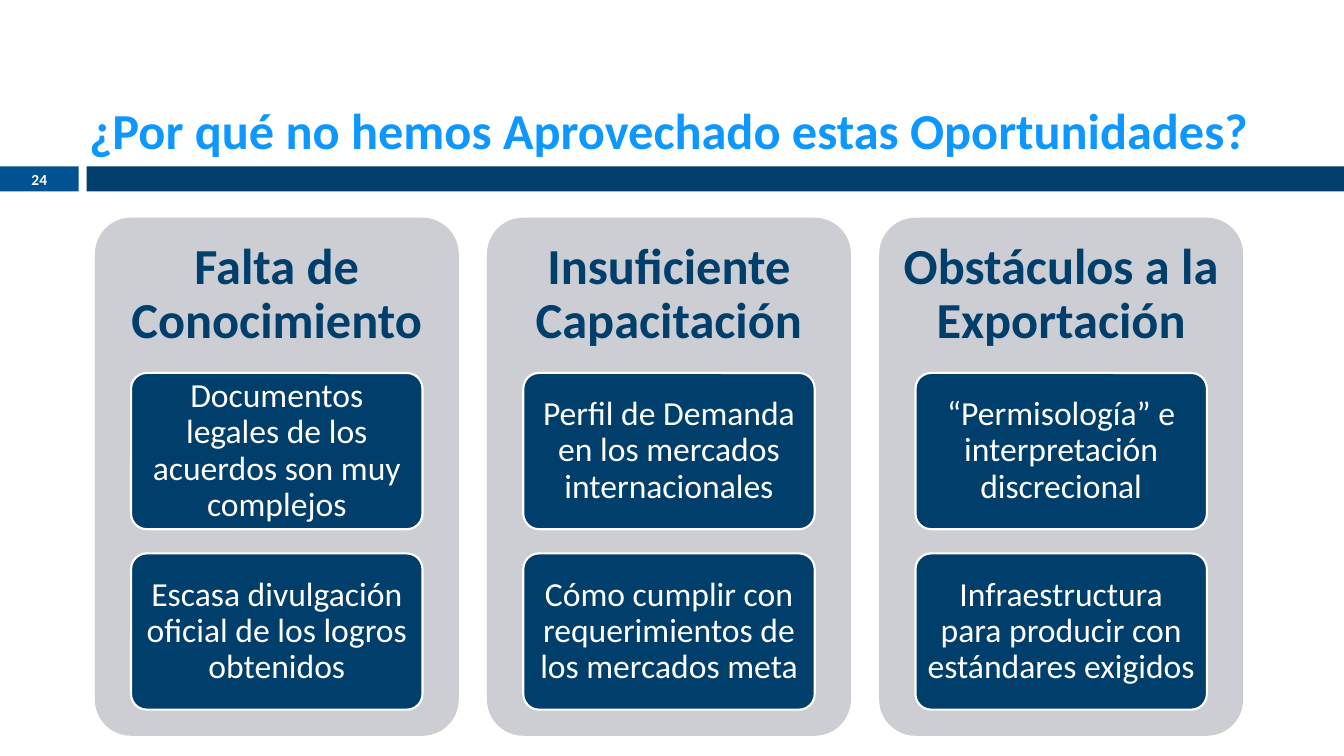
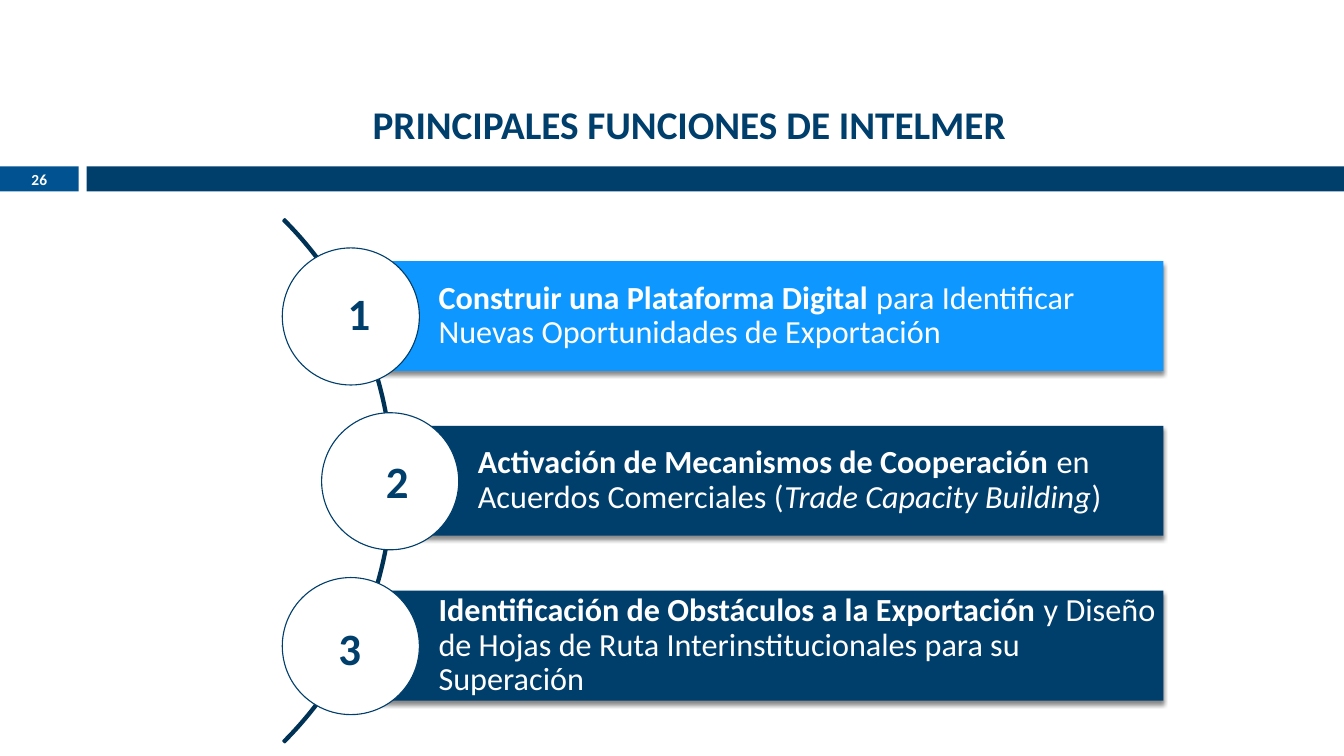
from lxml import etree
from pptx import Presentation
from pptx.dml.color import RGBColor
from pptx.enum import shapes as kinds, text as txt
from pptx.oxml.ns import qn
from pptx.util import Inches, Pt

COLORS = {"navy": "003E6C", "blue": "005390", "sky": "0E98FF",
          "gray": "CCCED4", "arc": "003256", "white": "FFFFFF",
          "shadow": "000000"}
FONT = "Calibri"
CENTER, LEFT = txt.PP_ALIGN.CENTER, txt.PP_ALIGN.LEFT
TOP, MIDDLE, BOTTOM = (txt.MSO_ANCHOR.TOP, txt.MSO_ANCHOR.MIDDLE,
                       txt.MSO_ANCHOR.BOTTOM)
SHAPE = kinds.MSO_SHAPE
DEFAULT_INSETS = (0.1, 0.05, 0.1, 0.05)

OBSTACLES = [
    ("Falta de Conocimiento",
     ["Documentos legales de los acuerdos son muy complejos",
      "Escasa divulgación oficial de los logros obtenidos"]),
    ("Insuficiente Capacitación",
     ["Perfil de Demanda en los mercados internacionales",
      "Cómo cumplir con requerimientos de los mercados meta"]),
    ("Obstáculos a la Exportación",
     ["“Permisología” e interpretación discrecional",
      "Infraestructura para producir con estándares exigidos"]),
]

# Bar left edge, bar colour, number position, text runs
FUNCTIONS = [
    (3.48, "sky", (3.32, 2.79),
     [("Construir una Plataforma Digital", {"bold": True}),
      (" para Identificar Nuevas Oportunidades de Exportación", {})]),
    (3.87, "navy", (3.7, 4.45),
     [("Activación de Mecanismos de Cooperación", {"bold": True}),
      (" en Acuerdos Comerciales (", {}),
      ("Trade Capacity Building", {"italic": True}),
      (")", {})]),
    (3.48, "navy", (3.23, 6.11),
     [("Identificación de Obstáculos a la Exportación", {"bold": True}),
      (" y Diseño de Hojas de Ruta Interinstitucionales para su Superación",
       {})]),
]


def rgb(name):
    return RGBColor.from_string(COLORS[name])


def write(shape, runs, size, color, bold=False, align=CENTER, anchor=MIDDLE,
          insets=DEFAULT_INSETS, spacing=1.0):
    """Fill a shape with one paragraph; runs is a string or (text, style) pairs."""
    frame = shape.text_frame
    left, top, right, bottom = map(Inches, insets)
    frame_format = {"word_wrap": True, "auto_size": txt.MSO_AUTO_SIZE.NONE,
                    "vertical_anchor": anchor, "margin_left": left,
                    "margin_top": top, "margin_right": right,
                    "margin_bottom": bottom}
    for name, value in frame_format.items():
        setattr(frame, name, value)
    paragraph = frame.paragraphs[0]
    paragraph.alignment, paragraph.line_spacing = align, spacing
    for words, style in [(runs, {})] if isinstance(runs, str) else runs:
        run = paragraph.add_run()
        run.text = words
        font_format = {"name": FONT, "size": Pt(size), "bold": bold, **style}
        for name, value in font_format.items():
            setattr(run.font, name, value)
        run.font.color.rgb = rgb(color)


def add_block(slide, kind, at, fill, line=None, width=1.5, adjust=()):
    block = slide.shapes.add_shape(kind, *map(Inches, at))
    block.shadow.inherit = False
    block.fill.solid()
    block.fill.fore_color.rgb = rgb(fill)
    if line:
        block.line.color.rgb = rgb(line)
        block.line.width = Pt(width)
    else:
        block.line.fill.background()
    for index, value in enumerate(adjust):
        block.adjustments[index] = value
    return block


def add_label(slide, at, words, size, color, **style):
    label = slide.shapes.add_textbox(*map(Inches, at))
    write(label, words, size, color, **style)


def cast_shadow(block):
    effects = block.element.spPr.find(qn("a:effectLst"))
    shadow = etree.SubElement(effects, qn("a:outerShdw"), {
        "blurRad": str(Pt(3)), "dist": str(Pt(2.4)), "dir": "5400000",
        "rotWithShape": "0"})
    tint = etree.SubElement(shadow, qn("a:srgbClr"), val=COLORS["shadow"])
    etree.SubElement(tint, qn("a:alpha"), val="45000")


def add_bands(slide, layout):
    """Draw the header bands and hand them to the layout all slides share."""
    for left, width, color in [(0, 0.78, "blue"), (0.86, 12.47, "navy")]:
        band = add_block(slide, SHAPE.RECTANGLE, (left, 1.65, width, 0.25), color)
        layout.shapes.element.append(band.element)


def add_header(slide, title, at, size, color, anchor, number):
    heading = slide.shapes.title
    heading.left, heading.top, heading.width, heading.height = map(Inches, at)
    write(heading, title, size, color, bold=True, anchor=anchor)
    add_label(slide, (0, 1.64, 0.78, 0.27), number, 11, "white", bold=True)


def add_obstacles(slide):
    for column, (heading, causes) in enumerate(OBSTACLES):
        left = 0.94 + column * 3.89
        add_block(slide, SHAPE.ROUNDED_RECTANGLE, (left, 2.16, 3.61, 5.14),
                  "gray", adjust=[0.1])
        add_label(slide, (left, 2.16, 3.61, 1.54), heading, 36, "navy",
                  bold=True, insets=(0.15,) * 4, spacing=0.9)
        for row, cause in enumerate(causes):
            card = add_block(slide, SHAPE.ROUNDED_RECTANGLE,
                             (left + 0.36, 3.7 + row * 1.79, 2.89, 1.55),
                             "navy", "white", adjust=[0.1])
            write(card, cause, 24, "white", insets=(0.07, 0.05, 0.07, 0.05),
                  spacing=0.9)


def add_functions(slide):
    # Arc from 315 to 45 degrees behind the numbered bars
    add_block(slide, SHAPE.BLOCK_ARC, (-3.44, 1.1, 7.34, 7.34), "arc", "arc",
              adjust=[189, 27, 0.003])
    bar_right, circle_size = 11.54, 1.36
    for index, (left, color, number_at, runs) in enumerate(FUNCTIONS):
        top = 2.59 + index * 1.635
        bar = add_block(slide, SHAPE.RECTANGLE,
                        (left, top, bar_right - left, 1.09), color)
        cast_shadow(bar)
        write(bar, runs, 23, "white", align=LEFT,
              insets=(0.87, 0.06, 0.06, 0.06), spacing=0.9)
        add_block(slide, SHAPE.OVAL,
                  (left - circle_size / 2, top - 0.13, circle_size, circle_size),
                  "white", "navy", 0.79)
        add_label(slide, (*number_at, 0.48, 0.64), str(index + 1), 32, "navy",
                  bold=True, anchor=TOP)


def main():
    deck = Presentation()
    deck.slide_width, deck.slide_height = Inches(13.33), Inches(7.5)
    layout = deck.slide_layouts[5]

    # Causes
    causes = deck.slides.add_slide(layout)
    add_bands(causes, layout)
    add_header(causes, "¿Por qué no hemos Aprovechado estas Oportunidades?",
               (0.69, 0.93, 11.89, 0.7), 36, "sky", BOTTOM, "24")
    add_obstacles(causes)

    # Main functions
    functions = deck.slides.add_slide(layout)
    add_header(functions, "PRINCIPALES FUNCIONES DE INTELMER",
               (1.85, 0.94, 9.97, 0.57), 28, "navy", TOP, "26")
    add_functions(functions)

    deck.save("out.pptx")


if __name__ == "__main__":
    main()
